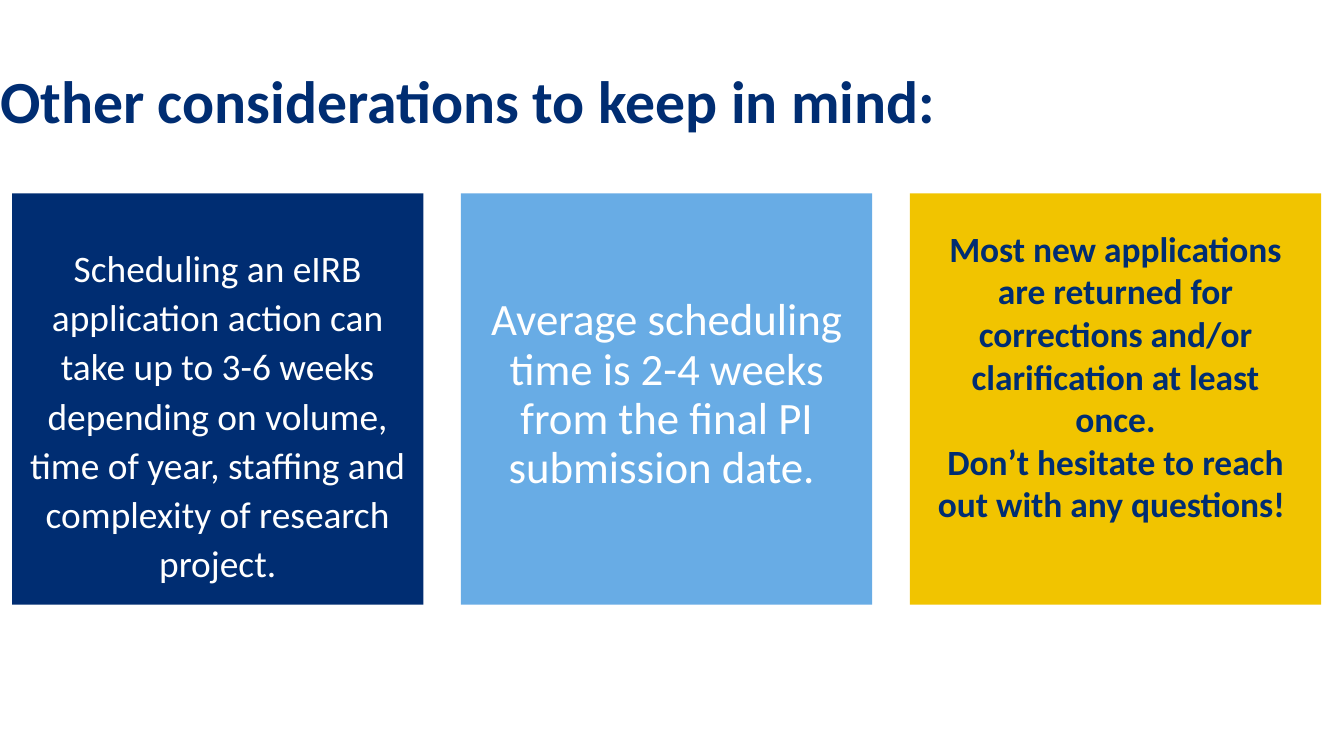
from pptx import Presentation
from pptx.dml.color import RGBColor
from pptx.enum.shapes import MSO_SHAPE
from pptx.enum.text import MSO_ANCHOR, MSO_AUTO_SIZE, PP_ALIGN
from pptx.util import Inches, Pt

RECTANGLE = MSO_SHAPE.RECTANGLE
TOP = MSO_ANCHOR.TOP
FIT_SHAPE = MSO_AUTO_SIZE.SHAPE_TO_FIT_TEXT
LEFT, CENTER = PP_ALIGN.LEFT, PP_ALIGN.CENTER

NAVY = RGBColor(0x00, 0x2D, 0x72)
BLUE = RGBColor(0x68, 0xAC, 0xE5)
GOLD = RGBColor(0xF1, 0xC4, 0x00)
WHITE = RGBColor(0xFF, 0xFF, 0xFF)
FONT = "Calibri"

TITLE = "Other considerations to keep in mind:"
CARDS = [
    dict(fill=NAVY, color=WHITE, size=20, bold=False, spacing=Pt(26.4),
         pad=0.09, top=1.79, height=2.88, insets=(0, 0),
         lines=["Scheduling an eIRB application action can take up to 3-6 weeks "
                "depending on volume, time of year, staffing and complexity of "
                "research project."]),
    dict(fill=BLUE, color=WHITE, size=24, bold=False, spacing=Pt(26.4),
         pad=0.09, top=2.2, height=1.78, insets=(0, 0),
         lines=["Average scheduling time is 2-4 weeks from the final PI "
                "submission date. "]),
    dict(fill=GOLD, color=NAVY, size=19, bold=True, spacing=None,
         pad=0.05, top=1.64, height=2.66, insets=(0.1, 0.05),
         lines=["Most new applications are returned for corrections and/or "
                "clarification at least once.",
                "Don’t hesitate to reach out with any questions! "]),
]
CARD_LEFT, CARD_TOP, CARD_SIZE, CARD_GAP = 0.09, 1.44, 3.06, 0.28


def write(tf, lines, size, color, bold, align, spacing, insets):
    tf.word_wrap = True
    tf.auto_size = FIT_SHAPE
    tf.vertical_anchor = TOP
    tf.margin_left = tf.margin_right = Inches(insets[0])
    tf.margin_top = tf.margin_bottom = Inches(insets[1])
    for i, line in enumerate(lines):
        p = tf.add_paragraph() if i else tf.paragraphs[0]
        p.text = line
        p.alignment = align
        p.line_spacing = spacing
        p.font.name = FONT
        p.font.size = Pt(size)
        p.font.bold = bold
        p.font.color.rgb = color


prs = Presentation()
prs.slide_width = Inches(10)
prs.slide_height = prs.slide_width * 9 // 16
s = prs.slides.add_slide(prs.slide_layouts[5])

title = s.shapes.title
title.left, title.top = Inches(0), Inches(0.25)
title.width, title.height = Inches(8.08), Inches(0.67)
write(title.text_frame, [TITLE], 32, NAVY, True, LEFT, Pt(54.4), (0, 0))

for i, card in enumerate(CARDS):
    left = CARD_LEFT + i * (CARD_SIZE + CARD_GAP)
    sp = s.shapes.add_shape(RECTANGLE, Inches(left), Inches(CARD_TOP),
                            Inches(CARD_SIZE), Inches(CARD_SIZE))
    sp.shadow.inherit = False
    sp.fill.solid()
    sp.fill.fore_color.rgb = card["fill"]
    sp.line.fill.background()
    box = s.shapes.add_textbox(Inches(left + card["pad"]), Inches(card["top"]),
                               Inches(CARD_SIZE - 2 * card["pad"]),
                               Inches(card["height"]))
    write(box.text_frame, card["lines"], card["size"], card["color"],
          card["bold"], CENTER, card["spacing"], card["insets"])

prs.save("out.pptx")
